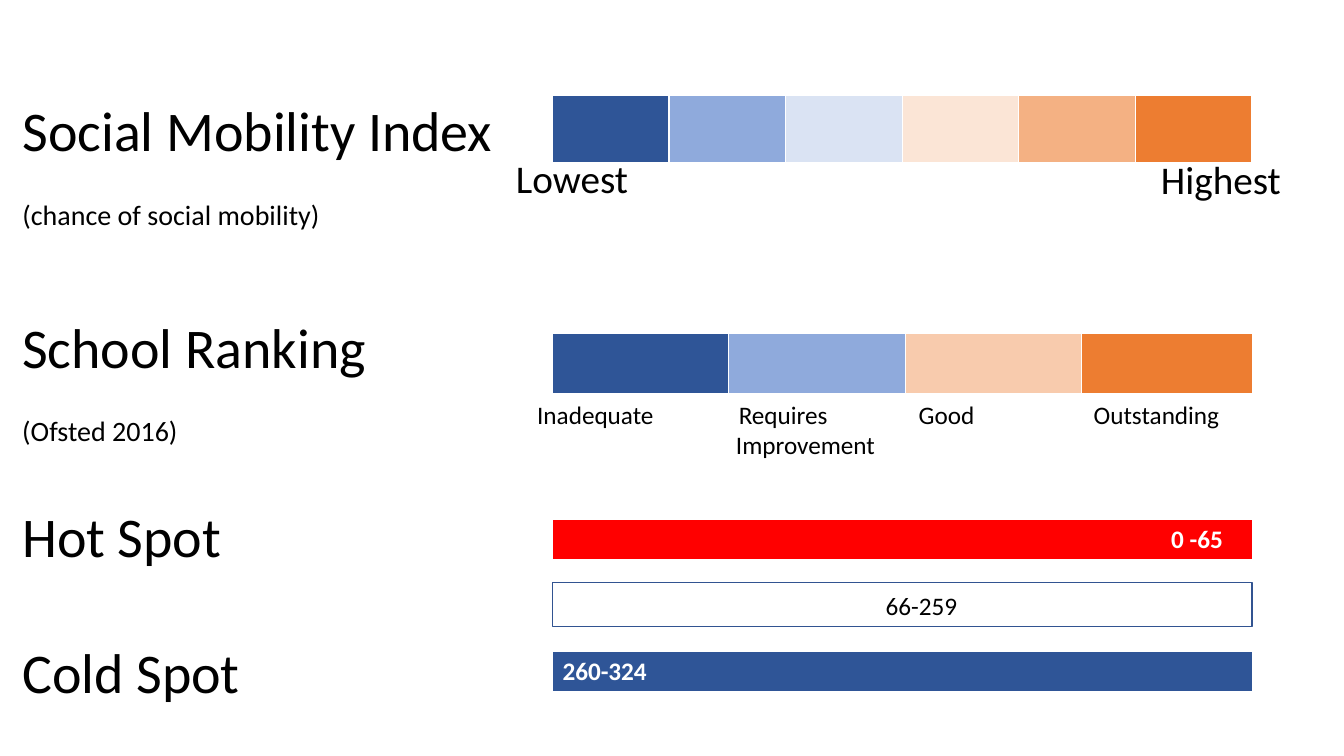
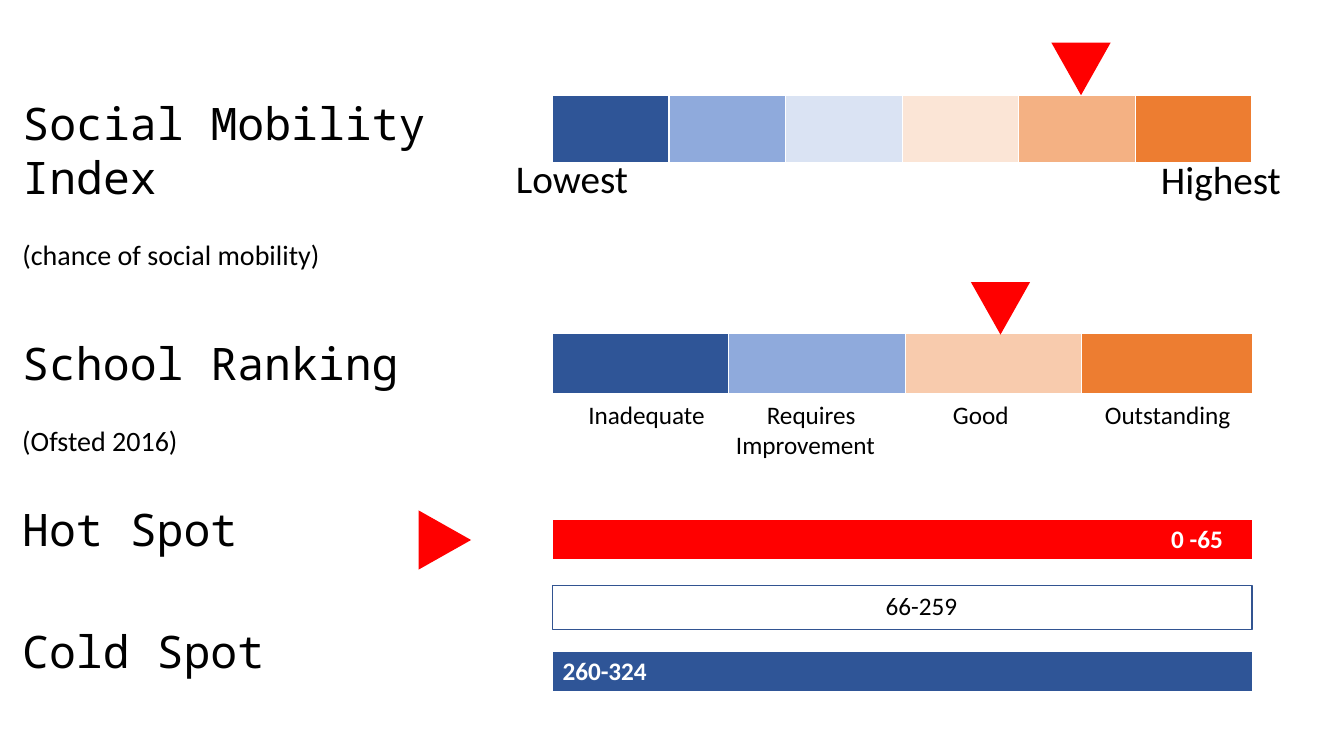
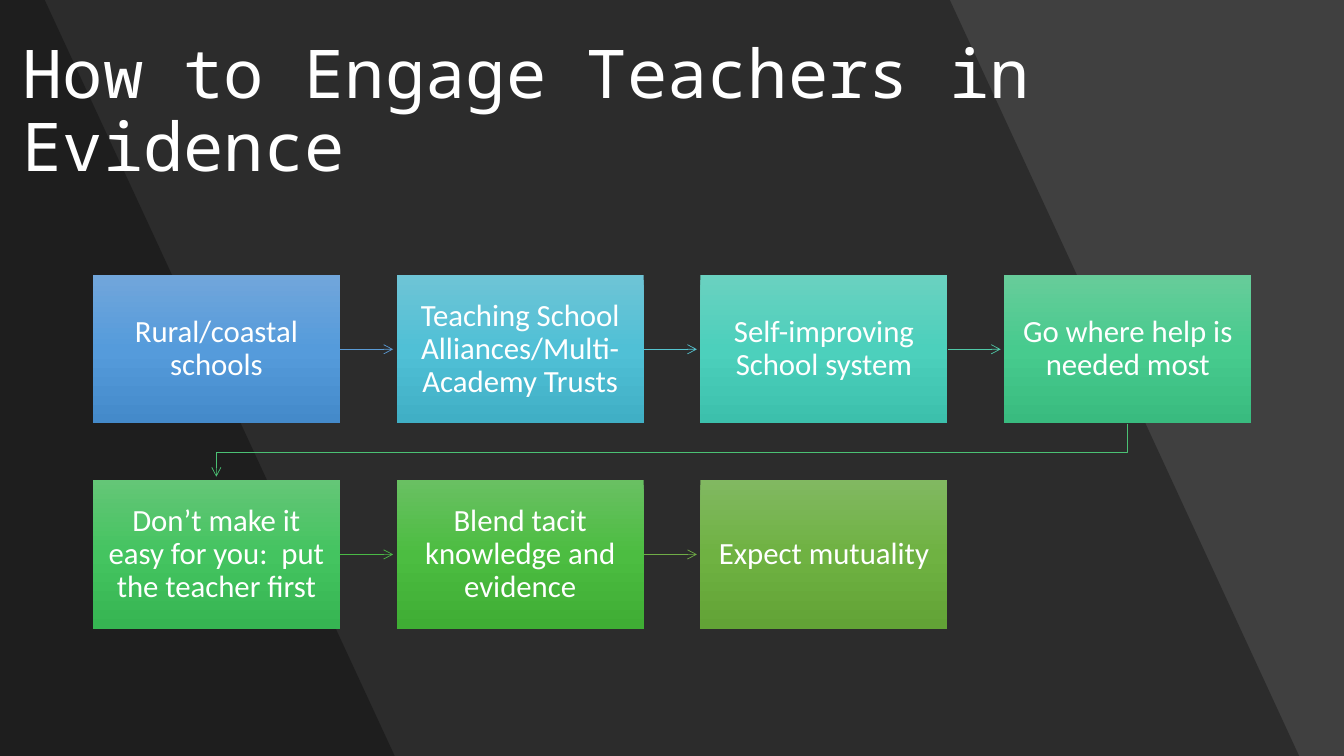
from copy import deepcopy

from lxml.etree import SubElement
from pptx import Presentation
from pptx.dml.color import RGBColor
from pptx.enum.shapes import MSO_CONNECTOR, MSO_SHAPE
from pptx.enum.text import MSO_ANCHOR, MSO_AUTO_SIZE, PP_ALIGN
from pptx.oxml.ns import qn
from pptx.util import Pt

SANS, MONO = "Calibri", "Noto Sans Mono"
BLACK = RGBColor(0x00, 0x00, 0x00)
WHITE = RGBColor(0xFF, 0xFF, 0xFF)
CHARCOAL = RGBColor(0x40, 0x40, 0x40)
RED = RGBColor(0xFF, 0x00, 0x00)
OUTLINE = RGBColor(0x32, 0x54, 0x91)
DARK_BLUE = RGBColor(0x2F, 0x55, 0x97)
MID_BLUE = RGBColor(0x8F, 0xAA, 0xDC)
PALE_BLUE = RGBColor(0xDA, 0xE3, 0xF3)
PALE_ORANGE = RGBColor(0xFB, 0xE5, 0xD6)
SOFT_ORANGE = RGBColor(0xF8, 0xCB, 0xAD)
MID_ORANGE = RGBColor(0xF4, 0xB1, 0x83)
ORANGE = RGBColor(0xED, 0x7D, 0x31)

SLIDE_WIDTH, SLIDE_HEIGHT = 960, 540
MARGIN = 8.8
SCALE_LEFT, SCALE_WIDTH = 394.6, 499.8

MOBILITY_COLORS = [DARK_BLUE, MID_BLUE, PALE_BLUE, PALE_ORANGE, MID_ORANGE, ORANGE]
RANKING_COLORS = [DARK_BLUE, MID_BLUE, SOFT_ORANGE, ORANGE]

# Each scale: top, height, column widths, fills
SCALES = [
    (238.3, 43, [126, 126, 126, 121.8], RANKING_COLORS),
    (68.4, 48, [SCALE_WIDTH / 6] * 6, MOBILITY_COLORS),
]
# Each band: top, fill, text, alignment
BANDS = [
    (370.8, RED, "0 -65", PP_ALIGN.RIGHT),
    (465.1, DARK_BLUE, "260-324", PP_ALIGN.LEFT),
]
# Each label: left, top, width, height, size, text
LABELS = [
    (361.5, 106.5, 130, 41, 28, "Lowest"),
    (822.2, 107.3, 104, 41, 28, "Highest"),
    (625.5, 418.2, 69, 29, 18, "66-259"),
]
LEGENDS = [
    {
        "font": SANS, "size": 40, "ranking_top": 219.6, "middle_top": 416,
        "ranking": "Inadequate\tRequires\tGood\tOutstanding",
        "stops": [144, 272.5, 397.5],
        "markers": [],
    },
    {
        "font": MONO, "size": 32, "ranking_top": 236, "middle_top": 418.2,
        "ranking": "\tInadequate\tRequires\tGood\tOutstanding",
        "stops": [36.5, 164, 297, 405.5],
        "markers": [(751, 30.5, 180), (693.5, 201.5, 180), (296.6, 367, 90)],
    },
]

# Each step: text, gradient from top to bottom, colour of the arrow that follows
STEPS = [
    ("Rural/coastal schools", ["71A6DB", "559BDB", "448ACA"], "5B9BD5"),
    ("Teaching School Alliances/Multi-Academy Trusts",
     ["6EC4D6", "50C0D6", "40AFC5"], "55C3CF"),
    ("Self-improving School system", ["6AD1C0", "4CD0BC", "3CC0AC"], "50C8A7"),
    ("Go where help is needed most", ["67CC9A", "47CB8E", "39BB7F"], "4BC174"),
    ("Don’t make it easy for you:  put the teacher first",
     ["64C677", "44C460", "36B552"], "4ABA46"),
    ("Blend tacit knowledge and evidence",
     ["69C062", "4CBD41", "3FAD34"], "70AD47"),
    ("Expect mutuality", ["81B861", "6FB242", "62A336"], None),
]
STEP_COLUMNS = 4
STEP_LEFT, STEP_TOP, STEP_WIDTH, STEP_HEIGHT = 66.3, 196.5, 176.5, 106
STEP_PITCH_X, STEP_PITCH_Y = 217, 146.5
ARROW_LENGTH = 38
BACKDROP_EDGES = [(678.5, 928), (32, 282)]


def place(shape, left, top, width, height):
    shape.left, shape.top = Pt(left), Pt(top)
    shape.width, shape.height = Pt(width), Pt(height)


def add_run(paragraph, text, size, font=SANS, color=BLACK, bold=False):
    run = paragraph.add_run()
    run.text = text
    run.font.name, run.font.size = font, Pt(size)
    run.font.bold = bold
    run.font.color.rgb = color


def prepare_frame(shape, anchor=MSO_ANCHOR.TOP):
    frame = shape.text_frame
    frame.word_wrap = True
    frame.auto_size = MSO_AUTO_SIZE.NONE
    frame.vertical_anchor = anchor
    return frame


def add_lines(shape, lines):
    """Write (text, size, font, space before) lines, left aligned."""
    frame = prepare_frame(shape)
    for index, (text, size, font, space) in enumerate(lines):
        paragraph = frame.add_paragraph() if index else frame.paragraphs[0]
        paragraph.alignment = PP_ALIGN.LEFT
        paragraph.space_before = Pt(space)
        add_run(paragraph, text, size, font)
    return frame


def add_text(slide, box, lines):
    textbox = slide.shapes.add_textbox(*map(Pt, box))
    return add_lines(textbox, lines)


def add_tab_stops(paragraph, stops):
    properties = paragraph._p.get_or_add_pPr()
    tab_list = SubElement(properties, qn("a:tabLst"))
    for stop in stops:
        SubElement(tab_list, qn("a:tab"), pos=str(int(Pt(stop))), algn="l")


def add_row(slide, top, height, widths, fills):
    """Add a one-row table whose cells are filled in turn."""
    frame = slide.shapes.add_table(
        1, len(fills), Pt(SCALE_LEFT), Pt(top), Pt(SCALE_WIDTH), Pt(height))
    table = frame.table
    for column, width in zip(table.columns, widths):
        column.width = Pt(width)
    for cell, fill in zip(table.rows[0].cells, fills):
        cell.fill.solid()
        cell.fill.fore_color.rgb = fill
    return table


def build_legend(presentation, legend):
    slide = presentation.slides.add_slide(presentation.slide_layouts[5])
    font, size = legend["font"], legend["size"]

    title = slide.shapes.title
    place(title, MARGIN, 64.8, 373, 104.5)
    add_lines(title, [("Social Mobility Index", size, font, 0),
                      ("(chance of social mobility)", 20, SANS, 24.4)])
    add_text(slide, (MARGIN, legend["ranking_top"], 336, 104.5),
             [("School Ranking", size, font, 0), ("(Ofsted 2016)", 20, SANS, 24.4)])
    add_text(slide, (MARGIN, 355, 251, 152.5),
             [("Hot Spot", size, font, 0), ("Cold Spot", size, font, 48.8)])

    for scale in SCALES:
        add_row(slide, *scale)
    for top, fill, text, alignment in BANDS:
        cell = add_row(slide, top, 29.2, [SCALE_WIDTH], [fill]).cell(0, 0)
        cell.margin_right = Pt(21)
        paragraph = cell.text_frame.paragraphs[0]
        paragraph.alignment = alignment
        add_run(paragraph, text, 18, color=WHITE, bold=True)

    ranking = add_text(slide, (376.6, 281.5, 544, 51),
                       [(legend["ranking"], 18, SANS, 0),
                        ("\tImprovement", 18, SANS, 0)])
    for paragraph, stops in zip(ranking.paragraphs, (legend["stops"], [142])):
        add_tab_stops(paragraph, stops)
    for *box, label_size, text in LABELS:
        add_text(slide, box, [(text, label_size, SANS, 0)])

    for left, top, rotation in legend["markers"]:
        marker = slide.shapes.add_shape(
            MSO_SHAPE.ISOSCELES_TRIANGLE, Pt(left), Pt(top), Pt(42.3), Pt(37.5))
        marker.rotation = rotation
        marker.shadow.inherit = False
        marker.fill.solid()
        marker.fill.fore_color.rgb = RED
        marker.line.fill.background()

    middle_band = slide.shapes.add_shape(
        MSO_SHAPE.RECTANGLE, Pt(SCALE_LEFT), Pt(legend["middle_top"]),
        Pt(SCALE_WIDTH), Pt(31.7))
    middle_band.shadow.inherit = False
    middle_band.fill.background()
    middle_band.line.color.rgb = OUTLINE
    middle_band.line.width = Pt(1)


def add_path(slide, points, close):
    start, *others = [(Pt(x), Pt(y)) for x, y in points]
    builder = slide.shapes.build_freeform(*start, scale=1.0)
    builder.add_line_segments(others, close=close)
    return builder.convert_to_shape()


def add_backdrop(slide, top_right, bottom_right):
    """Add a see-through dark panel with a slanted right edge."""
    panel = add_path(slide, [(0, 0), (top_right, 0), (bottom_right, SLIDE_HEIGHT),
                             (0, SLIDE_HEIGHT)], close=True)
    panel.shadow.inherit = False
    panel.line.fill.background()
    panel.fill.solid()
    panel.fill.fore_color.rgb = BLACK
    color = panel.element.spPr.find(qn("a:solidFill"))[0]
    SubElement(color, qn("a:alpha"), val="30000")


def style_arrow(arrow, color):
    arrow.line.color.rgb = RGBColor.from_string(color)
    arrow.line.width = Pt(0.5)
    properties = arrow.element.spPr
    SubElement(properties.find(qn("a:ln")), qn("a:tailEnd"), type="arrow")
    SubElement(properties, qn("a:effectLst"))


def add_arrow(slide, left, top, turns, color):
    """Lead from the step at left, top to the next one, or down to a new row."""
    if turns:
        x, y = left + STEP_WIDTH / 2, top + STEP_HEIGHT
        first_x = STEP_LEFT + STEP_WIDTH / 2
        arrow = add_path(slide, [(x, y), (x, y + 20.5), (first_x, y + 20.5),
                                 (first_x, y + ARROW_LENGTH)], close=False)
        arrow.fill.background()
    else:
        x, y = left + STEP_WIDTH, top + STEP_HEIGHT / 2
        arrow = slide.shapes.add_connector(
            MSO_CONNECTOR.STRAIGHT, Pt(x), Pt(y), Pt(x + ARROW_LENGTH), Pt(y))
    style_arrow(arrow, color)


def add_step(slide, left, top, text, gradient):
    step = slide.shapes.add_shape(
        MSO_SHAPE.RECTANGLE, Pt(left), Pt(top), Pt(STEP_WIDTH), Pt(STEP_HEIGHT))
    step.shadow.inherit = False
    step.line.fill.background()
    step.fill.gradient()
    step.fill.gradient_angle = 270
    stop_list = step.element.spPr.find(qn("a:gradFill")).find(qn("a:gsLst"))
    stop_list.append(deepcopy(stop_list[0]))
    for index, stop in enumerate(step.fill.gradient_stops):
        stop.position = index / 2
        stop.color.rgb = RGBColor.from_string(gradient[index])

    frame = prepare_frame(step, MSO_ANCHOR.MIDDLE)
    frame.margin_left = frame.margin_right = Pt(8.6)
    frame.margin_top = frame.margin_bottom = Pt(9.2)
    paragraph = frame.paragraphs[0]
    paragraph.alignment = PP_ALIGN.CENTER
    paragraph.line_spacing = 0.9
    add_run(paragraph, text, 22, color=WHITE)


def build_process(presentation):
    slide = presentation.slides.add_slide(presentation.slide_layouts[5])
    slide.background.fill.solid()
    slide.background.fill.fore_color.rgb = CHARCOAL
    for edge in BACKDROP_EDGES:
        add_backdrop(slide, *edge)

    title = slide.shapes.title
    place(title, MARGIN, 28.8, 938, 104.4)
    paragraph = prepare_frame(title, MSO_ANCHOR.MIDDLE).paragraphs[0]
    paragraph.alignment = PP_ALIGN.LEFT
    paragraph.line_spacing = 0.9
    add_run(paragraph, "How to Engage Teachers in Evidence", 48, MONO, WHITE)
    slide.shapes.element.append(title.element)

    for index, (text, gradient, arrow_color) in enumerate(STEPS):
        row, column = divmod(index, STEP_COLUMNS)
        left = STEP_LEFT + column * STEP_PITCH_X
        top = STEP_TOP + row * STEP_PITCH_Y
        if arrow_color:
            add_arrow(slide, left, top, column == STEP_COLUMNS - 1, arrow_color)
        add_step(slide, left, top, text, gradient)


def main():
    presentation = Presentation()
    presentation.slide_width, presentation.slide_height = Pt(SLIDE_WIDTH), Pt(SLIDE_HEIGHT)
    for legend in LEGENDS:
        build_legend(presentation, legend)
    build_process(presentation)
    presentation.save("out.pptx")


if __name__ == "__main__":
    main()
